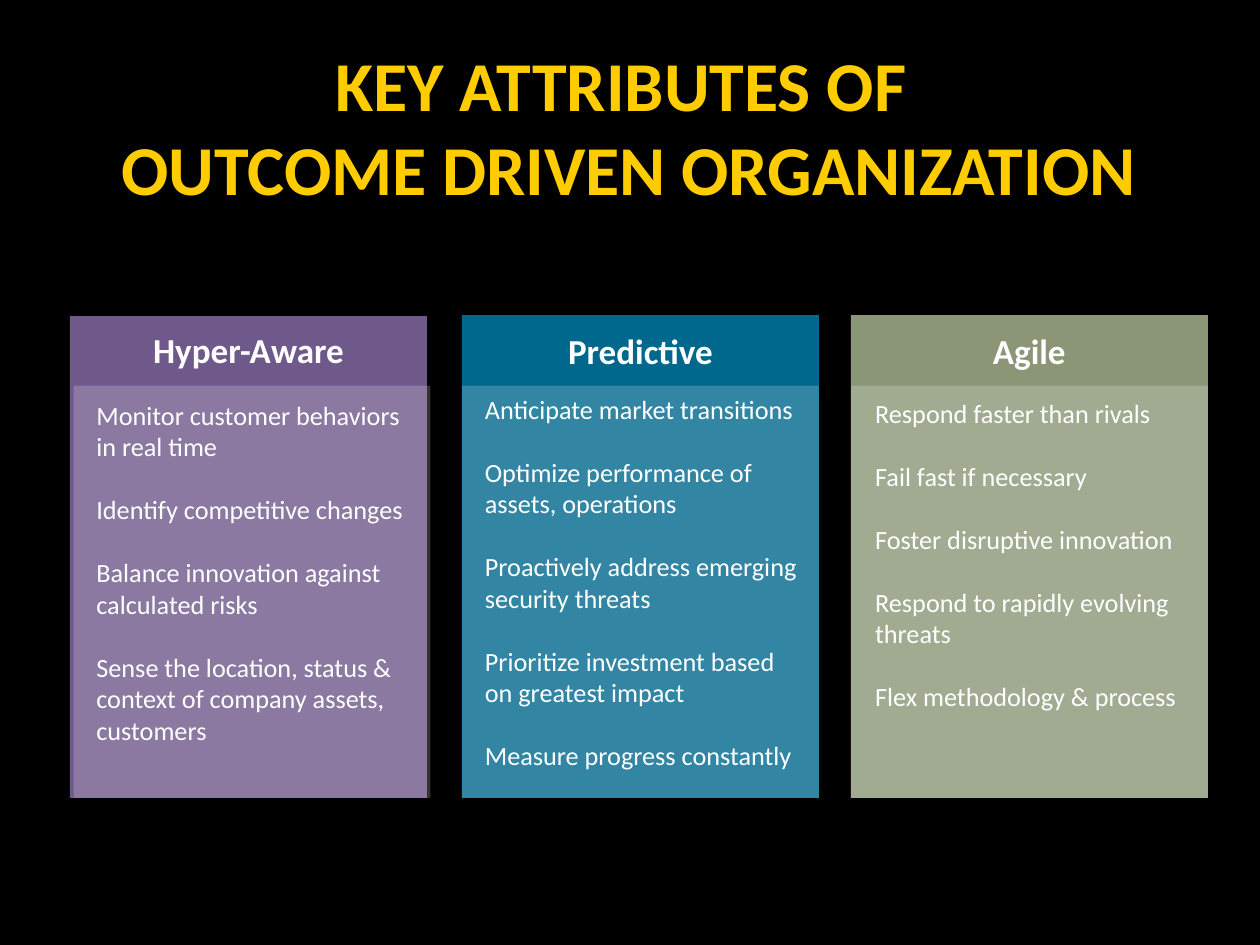
from dataclasses import dataclass

from lxml import etree
from pptx import Presentation
from pptx.dml.color import RGBColor
from pptx.enum.shapes import MSO_SHAPE
from pptx.enum.text import MSO_ANCHOR, MSO_AUTO_SIZE, PP_ALIGN
from pptx.oxml.ns import qn
from pptx.util import Pt

RECTANGLE = MSO_SHAPE.RECTANGLE
TOP, MIDDLE = MSO_ANCHOR.TOP, MSO_ANCHOR.MIDDLE
NO_AUTOFIT = MSO_AUTO_SIZE.NONE
LEFT, CENTER = PP_ALIGN.LEFT, PP_ALIGN.CENTER

FONT = "Calibri"
BLACK, WHITE, GOLD = "000000", "FFFFFF", "FFCC00"
COLUMN_WIDTH = 204
COLUMN_BOTTOM = 456
VEIL_TOP = 220.4
VEIL_OPACITY = 20
HEADING_HEIGHT = 29
BODY_WIDTH = 198


@dataclass
class Attribute:
    heading: str
    color: str
    left: float
    top: float
    heading_top: float
    veil_left: float
    body_left: float
    body_top: float
    points: list[str]


ATTRIBUTES = [
    Attribute("Hyper-Aware", "6F588A", 40, 180.6, 184, 42, 48, 224.6, [
        "Monitor customer behaviors in real time",
        "Identify competitive changes",
        "Balance innovation against calculated risks",
        "Sense the location, status & context of company assets, customers",
    ]),
    Attribute("Predictive", "00688C", 264, 180, 185, 264, 270, 221, [
        "Anticipate market transitions",
        "Optimize performance of assets, operations",
        "Proactively address emerging security threats",
        "Prioritize investment based on greatest impact",
        "Measure progress constantly",
    ]),
    Attribute("Agile", "8A9676", 486.2, 180, 185, 486.2, 493, 223.2, [
        "Respond faster than rivals",
        "Fail fast if necessary",
        "Foster disruptive innovation",
        "Respond to rapidly evolving threats",
        "Flex methodology & process",
    ]),
]


def rgb(color: str) -> RGBColor:
    return RGBColor.from_string(color)


def place(shape, left: float, top: float, width: float, height: float) -> None:
    shape.left, shape.top = Pt(left), Pt(top)
    shape.width, shape.height = Pt(width), Pt(height)


def write(shape, lines: list[str], *, size: float, color: str = WHITE,
          bold: bool = False, align=LEFT, anchor=TOP, gap: float = 0) -> None:
    """Fill a shape with one paragraph per line, with a gap between them."""
    frame = shape.text_frame
    frame.word_wrap = True
    frame.auto_size = NO_AUTOFIT
    frame.vertical_anchor = anchor
    for index, line in enumerate(lines):
        para = frame.add_paragraph() if index else frame.paragraphs[0]
        para.alignment = align
        para.space_before = Pt(gap if index else 0)
        span = para.add_run()
        span.text = line
        span.font.name = FONT
        span.font.size = Pt(size)
        span.font.bold = bold
        span.font.color.rgb = rgb(color)


def add_text(page, lines: list[str], left: float, top: float,
             width: float, height: float, **style) -> None:
    box = page.shapes.add_textbox(Pt(left), Pt(top), Pt(width), Pt(height))
    write(box, lines, **style)


def add_panel(page, left: float, top: float, color: str,
              opacity: int = 100) -> None:
    """Draw a column rectangle that reaches down to the common bottom edge."""
    panel = page.shapes.add_shape(RECTANGLE, Pt(left), Pt(top),
                                  Pt(COLUMN_WIDTH), Pt(COLUMN_BOTTOM - top))
    panel.shadow.inherit = False
    panel.line.fill.background()
    panel.fill.solid()
    panel.fill.fore_color.rgb = rgb(color)
    if opacity < 100:
        swatch = panel.fill._xPr.find(".//" + qn("a:srgbClr"))
        etree.SubElement(swatch, qn("a:alpha"), val=str(opacity * 1000))


def add_column(page, item: Attribute) -> None:
    add_panel(page, item.left, item.top, item.color)
    add_text(page, [item.heading], item.left, item.heading_top,
             COLUMN_WIDTH, HEADING_HEIGHT, size=20, bold=True, align=CENTER)
    add_panel(page, item.veil_left, VEIL_TOP, WHITE, VEIL_OPACITY)
    add_text(page, item.points, item.body_left, item.body_top,
             BODY_WIDTH, COLUMN_BOTTOM - item.body_top, size=15, gap=18)


def main() -> None:
    deck = Presentation()
    deck.slide_width, deck.slide_height = Pt(720), Pt(540)
    page = deck.slides.add_slide(deck.slide_layouts[5])
    page.background.fill.solid()
    page.background.fill.fore_color.rgb = rgb(BLACK)

    # Title
    title = page.shapes.title
    place(title, 0, 19.4, 718.6, 104.4)
    write(title, ["KEY ATTRIBUTES OF ", "OUTCOME DRIVEN ORGANIZATION"],
          size=40, color=GOLD, bold=True, align=CENTER, anchor=MIDDLE)

    # One column per attribute
    for item in ATTRIBUTES:
        add_column(page, item)

    deck.save("out.pptx")


if __name__ == "__main__":
    main()
